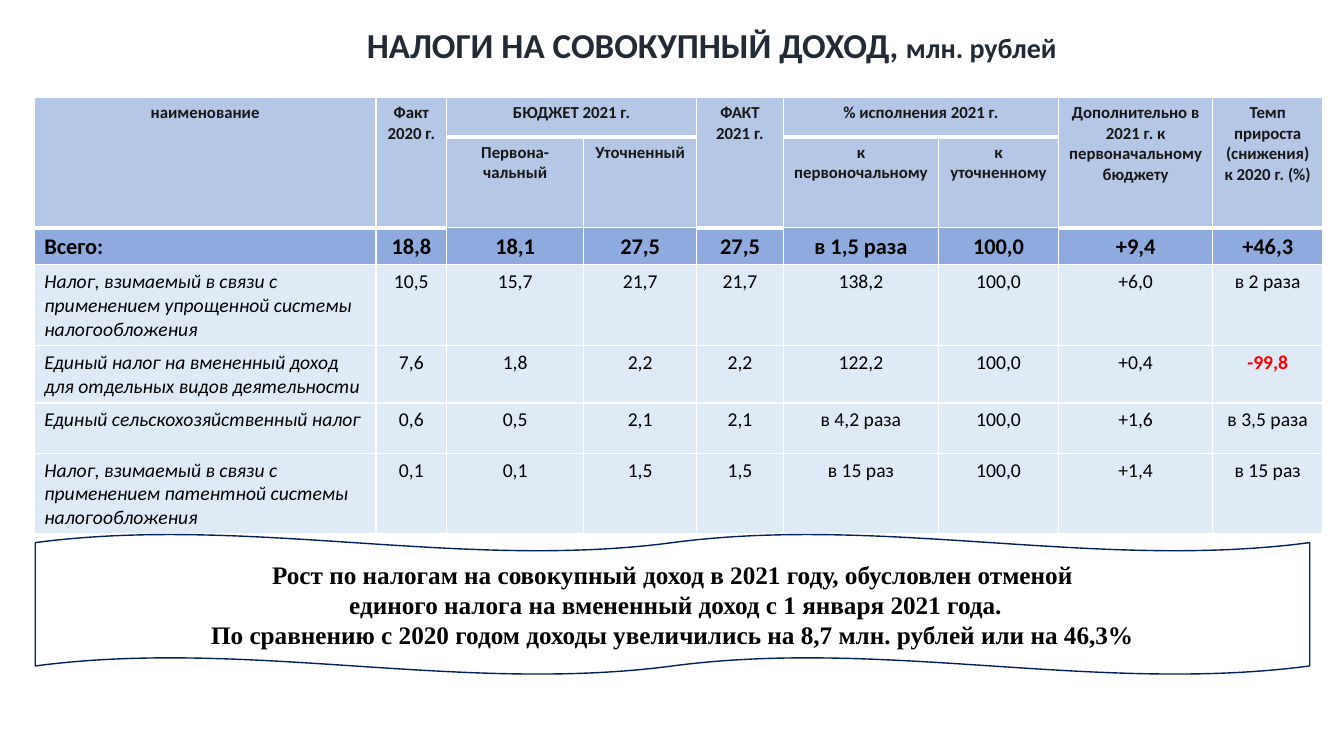
from lxml import etree
from pptx import Presentation
from pptx.dml.color import RGBColor
from pptx.enum.shapes import MSO_SHAPE
from pptx.enum.text import MSO_ANCHOR, PP_ALIGN
from pptx.oxml.ns import qn
from pptx.util import Inches, Pt

CENTER, LEFT = PP_ALIGN.CENTER, PP_ALIGN.LEFT
MIDDLE = MSO_ANCHOR.MIDDLE
DOUBLE_WAVE = MSO_SHAPE.DOUBLE_WAVE

COLORS = {
    "title": "222A35", "head_text": "181717", "text": "000000",
    "negative": "FF0000", "head": "B4C7E7", "total": "8FAADC",
    "body": "DEEBF7", "white": "FFFFFF", "navy": "002060",
}

TITLE = [("НАЛОГИ НА СОВОКУПНЫЙ ДОХОД", 25), (", ", 24), ("млн. рублей", 20)]

COLUMN_WIDTHS = [3.39, 0.7, 1.36, 1.12, 0.86, 1.54, 1.19, 1.53, 1.09]
ROW_HEIGHTS = [0.39, 0.9, 0.36, 0.8, 0.57, 0.5, 0.8]
HEADER_ROWS = 2
TOTAL_ROW = 2
# Merged header cells: top row, left column, bottom row, right column
MERGES = [(0, column, 1, column) for column in (0, 1, 4, 7, 8)]
MERGES += [(0, 2, 0, 3), (0, 5, 0, 6)]

ROWS = [
    ["наименование", "Факт 2020 г.", "БЮДЖЕТ 2021 г.", "", "ФАКТ 2021 г.",
     "% исполнения 2021 г.", "", "Дополнительно в 2021 г. к первоначальному бюджету",
     "Темп прироста (снижения) к 2020 г. (%)"],
    ["", "", "Первона-чальный", "Уточненный", "", "к первоночальному",
     "к уточненному", "", ""],
    ["Всего:", "18,8", "18,1", "27,5", "27,5", "в 1,5 раза", "100,0", "+9,4", "+46,3"],
    ["Налог, взимаемый в связи с применением упрощенной системы налогообложения",
     "10,5", "15,7", "21,7", "21,7", "138,2", "100,0", "+6,0", "в 2 раза"],
    ["Единый налог на вмененный доход для отдельных видов деятельности",
     "7,6", "1,8", "2,2", "2,2", "122,2", "100,0", "+0,4", "-99,8"],
    ["Единый сельскохозяйственный налог",
     "0,6", "0,5", "2,1", "2,1", "в 4,2 раза", "100,0", "+1,6", "в 3,5 раза"],
    ["Налог, взимаемый в связи с применением патентной системы налогообложения",
     "0,1", "0,1", "1,5", "1,5", "в 15 раз", "100,0", "+1,4", "в 15 раз"],
]

CONCLUSION = [
    "Рост по налогам на совокупный доход в 2021 году, обусловлен отменой",
    " единого налога на вмененный доход с 1 января 2021 года.",
    "По сравнению с 2020 годом доходы увеличились на 8,7 млн. рублей или на 46,3%",
]


def rgb(name):
    return RGBColor.from_string(COLORS[name])


def set_font(font, size, color, name="Calibri", bold=True, italic=False):
    font.name, font.size = name, Pt(size)
    font.bold, font.italic = bold, italic
    font.color.rgb = rgb(color)


def add_title(page):
    box = page.shapes.add_textbox(Inches(0.71), Inches(0.18), Inches(12.7), Inches(0.52))
    box.text_frame.word_wrap = True
    para = box.text_frame.paragraphs[0]
    para.alignment = CENTER
    for text, size in TITLE:
        span = para.add_run()
        span.text = text
        set_font(span.font, size, "title")


def set_borders(cell, bottom_width):
    properties = cell._tc.get_or_add_tcPr()
    for side, width in (("L", 1), ("R", 1), ("T", 1), ("B", bottom_width)):
        line = etree.SubElement(properties, qn(f"a:ln{side}"), w=str(Pt(width)))
        fill = etree.SubElement(line, qn("a:solidFill"))
        etree.SubElement(fill, qn("a:srgbClr"), val=COLORS["white"])


def cell_style(row, column, text):
    """Return the fill, size, text colour, bold and italic of a cell."""
    if row < HEADER_ROWS:
        return "head", 12, "head_text", True, False
    if row == TOTAL_ROW:
        return "total", 16, "text", True, False
    if text.startswith("-"):
        return "body", 14, "negative", True, False
    return "body", 14, "text", False, column == 0


def fill_cell(cell, row, column, text):
    fill, size, color, bold, italic = cell_style(row, column, text)
    thick = row == 0 or cell.is_spanned
    set_borders(cell, 3 if thick else 1)
    cell.fill.solid()
    cell.fill.fore_color.rgb = rgb(fill)
    para = cell.text_frame.paragraphs[0]
    para.text = text
    para.alignment = LEFT if column == 0 and row >= HEADER_ROWS else CENTER
    set_font(para.font, size, color, bold=bold, italic=italic)


def add_tax_table(page):
    frame = page.shapes.add_table(
        len(ROWS), len(COLUMN_WIDTHS), Inches(0.34), Inches(0.97),
        Inches(sum(COLUMN_WIDTHS)), Inches(sum(ROW_HEIGHTS)))
    table = frame.table
    table.horz_banding = False
    for column, width in zip(table.columns, COLUMN_WIDTHS):
        column.width = Inches(width)
    for row, height in zip(table.rows, ROW_HEIGHTS):
        row.height = Inches(height)
    for top, left, bottom, right in MERGES:
        table.cell(top, left).merge(table.cell(bottom, right))
    for row, texts in enumerate(ROWS):
        for column, text in enumerate(texts):
            fill_cell(table.cell(row, column), row, column, text)


def add_conclusion(page):
    wave = page.shapes.add_shape(
        DOUBLE_WAVE, Inches(0.35), Inches(5.3), Inches(12.64), Inches(1.39))
    wave.shadow.inherit = False
    wave.adjustments[0] = 0.06
    wave.adjustments[1] = 0
    wave.fill.solid()
    wave.fill.fore_color.rgb = rgb("white")
    wave.line.color.rgb = rgb("navy")
    wave.line.width = Pt(1)
    frame = wave.text_frame
    frame.word_wrap = True
    frame.vertical_anchor = MIDDLE
    for index, text in enumerate(CONCLUSION):
        para = frame.add_paragraph() if index else frame.paragraphs[0]
        para.text = text
        para.alignment = CENTER
        set_font(para.font, 18, "text", name="Times New Roman")


def main():
    deck = Presentation()
    deck.slide_width, deck.slide_height = Inches(13.33), Inches(7.5)
    page = deck.slides.add_slide(deck.slide_layouts[6])
    add_title(page)
    add_tax_table(page)
    add_conclusion(page)
    deck.save("out.pptx")


if __name__ == "__main__":
    main()
